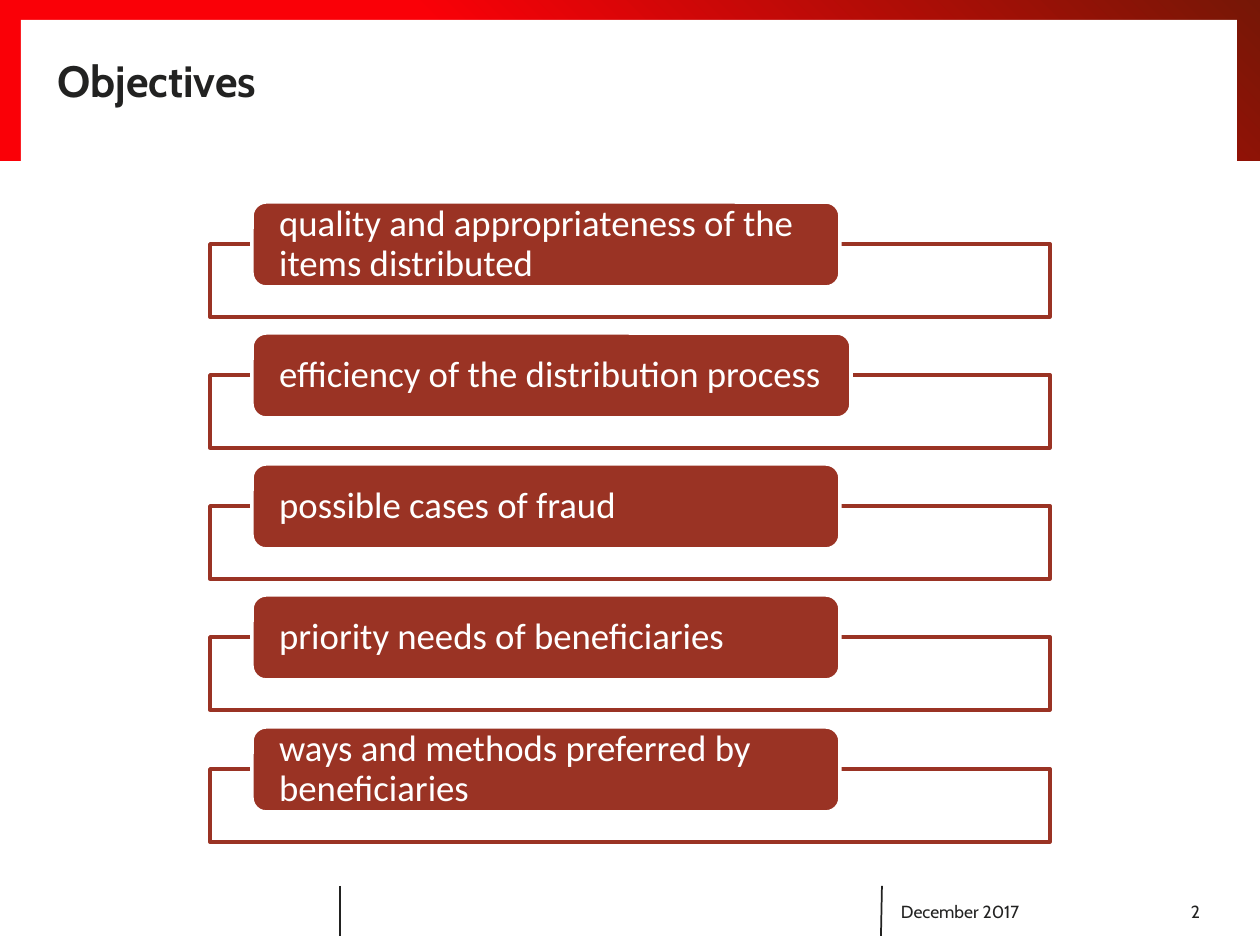
from pptx import Presentation
from pptx.dml.color import RGBColor
from pptx.enum.shapes import MSO_CONNECTOR, MSO_SHAPE
from pptx.enum.text import MSO_ANCHOR, PP_ALIGN
from pptx.oxml.ns import qn
from pptx.util import Pt
from lxml import etree

RECT, ROUND = MSO_SHAPE.RECTANGLE, MSO_SHAPE.ROUNDED_RECTANGLE
LINE = MSO_CONNECTOR.STRAIGHT
MIDDLE = MSO_ANCHOR.MIDDLE
LEFT, RIGHT = PP_ALIGN.LEFT, PP_ALIGN.RIGHT

WHITE = RGBColor(0xFF, 0xFF, 0xFF)
INK = RGBColor(0x22, 0x22, 0x21)
BRICK = RGBColor(0x9A, 0x33, 0x24)
RED = RGBColor(0xFA, 0x00, 0x07)
MAROON = RGBColor(0x76, 0x17, 0x06)

# Content: goals with pill widths, then labels
GOALS = [
    ("quality and appropriateness of the items distributed", 588),
    ("efficiency of the distribution process", 599),
    ("possible cases of fraud", 588),
    ("priority needs of beneficiaries", 588),
    ("ways and methods preferred by beneficiaries", 588),
]
HEAD = dict(name="Cabin", size=Pt(25), bold=True)
FOOT = dict(name="Cabin", size=Pt(10))
BODY = dict(name="Calibri", size=Pt(21))
LABELS = [  # text, box, side and top insets, alignment, font
    ("Objectives", (58, 45, 1142, 69), (0, 0), LEFT, HEAD),
    ("December 2017", (888, 887, 218, 50), (13, 6), LEFT, FOOT),
    ("2", (1106, 887, 107, 50), (13, 6), RIGHT, FOOT),
]
RULES = [(340, 886, 340, 936), (882, 886, 881, 936)]
TOP, SPAN = 202, 525  # first pill top, distance to the last one

SCALE = 914400 // 126


def px(*nums):
    return [n * SCALE for n in nums]


def add_box(kind, box, fill=None, line=None):
    shape = slide.shapes.add_shape(kind, *px(*box))
    shape.shadow.inherit = False
    if fill is not None:
        shape.fill.solid()
        shape.fill.fore_color.rgb = fill
    if line is None:
        shape.line.fill.background()
    else:
        shape.line.color.rgb = line
        shape.line.width = Pt(2)
    return shape


def write(shape, text, inset, align, font, color):
    frame = shape.text_frame
    frame.word_wrap = True
    frame.vertical_anchor = MIDDLE
    side, top = px(*inset)
    frame.margin_left = frame.margin_right = side
    frame.margin_top = frame.margin_bottom = top
    para = frame.paragraphs[0]
    para.alignment = align
    run = para.add_run()
    run.text = text
    for key, value in font.items():
        setattr(run.font, key, value)
    run.font.color.rgb = color
    return para


prs = Presentation()
prs.slide_width, prs.slide_height = px(1260, 945)
slide = prs.slides.add_slide(prs.slide_layouts[6])

# Gradient frame at the top
band = add_box(RECT, (0, 0, 1260, 161))
band.fill.gradient()
band.fill.gradient_angle = 45
for stop, (color, pos) in zip(band.fill.gradient_stops, [(RED, 0.4), (MAROON, 1)]):
    stop.color.rgb = color
    stop.position = pos
add_box(RECT, (21, 20, 1216, 149), WHITE)

# Footer rules
for ends in RULES:
    rule = slide.shapes.add_connector(LINE, *px(*ends))
    rule.line.color.rgb = INK
    rule.line.width = Pt(1)
    etree.SubElement(rule._element.spPr, qn("a:effectLst"))

# Title, date and page number
for text, box, inset, align, font in LABELS:
    write(slide.shapes.add_textbox(*px(*box)), text, inset, align, font, INK)

# Goals: an outlined bar behind each pill
for i, (text, wide) in enumerate(GOALS):
    top = TOP + i * SPAN // (len(GOALS) - 1)
    bar = add_box(RECT, (210, top + 42, 840, 73), WHITE, BRICK)
    color = bar.fill._xPr.find(qn("a:solidFill"))[0]
    etree.SubElement(color, qn("a:alpha"), val="90000")
    pill = add_box(ROUND, (252, top, wide, 85), BRICK, WHITE)
    para = write(pill, text, (23, 0), LEFT, BODY, WHITE)
    para.line_spacing = 0.9

prs.save("out.pptx")
